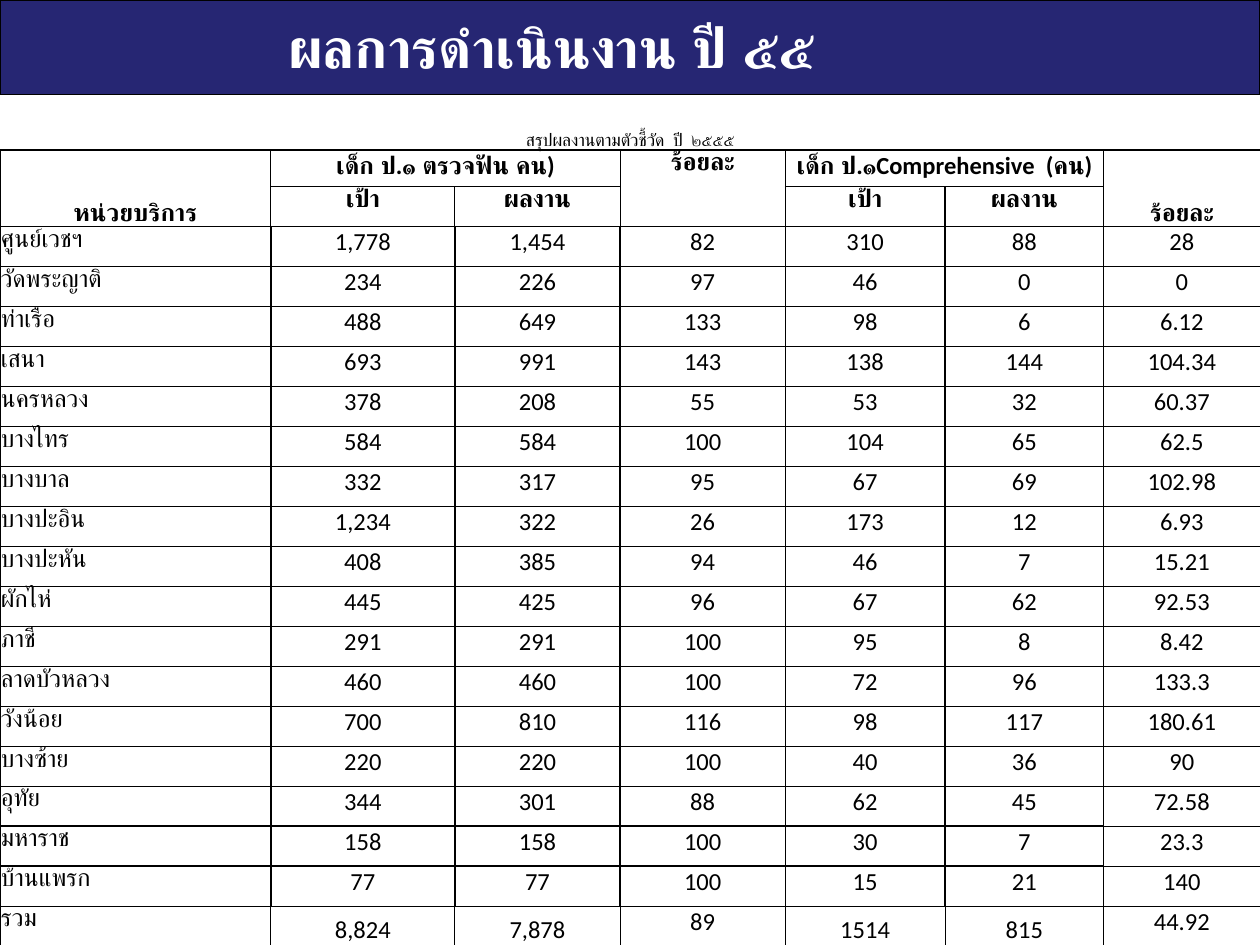
from dataclasses import dataclass

from lxml import etree
from pptx import Presentation
from pptx.dml.color import RGBColor
from pptx.enum.shapes import MSO_SHAPE
from pptx.enum.text import MSO_ANCHOR, PP_ALIGN
from pptx.oxml.ns import qn
from pptx.slide import Slide
from pptx.table import Table, _Cell
from pptx.util import Cm, Pt

RECTANGLE = MSO_SHAPE.RECTANGLE
TOP, MIDDLE, BOTTOM = MSO_ANCHOR.TOP, MSO_ANCHOR.MIDDLE, MSO_ANCHOR.BOTTOM
LEFT, CENTER = PP_ALIGN.LEFT, PP_ALIGN.CENTER
SIDES = "LRTB"


@dataclass(frozen=True)
class Theme:
    banner: RGBColor = RGBColor(0x26, 0x26, 0x73)
    ink: RGBColor = RGBColor(0, 0, 0)
    white: RGBColor = RGBColor(0xFF, 0xFF, 0xFF)
    title_font: str = "Lato"
    table_font: str = "Calibri"
    title_size: Pt = Pt(32)
    caption_size: Pt = Pt(10)
    table_size: Pt = Pt(14)
    thin: Pt = Pt(0.5)
    banner_line: Pt = Pt(0.75)
    thick: Pt = Pt(1)


@dataclass(frozen=True)
class HeaderCell:
    text: str
    row: int
    column: int
    row_span: int = 1
    column_span: int = 1
    anchor: MSO_ANCHOR = TOP


THEME = Theme()
SLIDE_WIDTH, SLIDE_HEIGHT = Cm(25.4), Cm(19.05)
TABLE_TOP = Cm(1.98)
COLUMN_WIDTHS = [Cm(width) for width in (5.46, 3.71, 3.33, 3.33, 3.22, 3.2, 3.15)]
CAPTION_HEIGHT, GROUP_HEIGHT, TOTAL_HEIGHT = Cm(1.04), Cm(0.74), Cm(0.78)
CAPTION_ROW, GROUP_ROW, SUBHEAD_ROW, FIRST_BODY_ROW = range(4)

HEADERS = [
    HeaderCell("หน่วยบริการ", GROUP_ROW, 0, row_span=2, anchor=BOTTOM),
    HeaderCell("เด็ก ป.๑ ตรวจฟัน คน)", GROUP_ROW, 1, column_span=2),
    HeaderCell("ร้อยละ", GROUP_ROW, 3, row_span=2),
    HeaderCell("เด็ก ป.๑Comprehensive  (คน)", GROUP_ROW, 4, column_span=2),
    HeaderCell("ร้อยละ", GROUP_ROW, 6, row_span=2, anchor=BOTTOM),
    *(HeaderCell(text, SUBHEAD_ROW, start + offset)
      for start in (1, 4) for offset, text in enumerate(("เป้า", "ผลงาน"))),
]

RESULTS = [
    ("ศูนย์เวชฯ", "1,778", "1,454", "82", "310", "88", "28"),
    ("วัดพระญาติ", "234", "226", "97", "46", "0", "0"),
    ("ท่าเรือ", "488", "649", "133", "98", "6", "6.12"),
    ("เสนา", "693", "991", "143", "138", "144", "104.34"),
    ("นครหลวง", "378", "208", "55", "53", "32", "60.37"),
    ("บางไทร", "584", "584", "100", "104", "65", "62.5"),
    ("บางบาล", "332", "317", "95", "67", "69", "102.98"),
    ("บางปะอิน", "1,234", "322", "26", "173", "12", "6.93"),
    ("บางปะหัน", "408", "385", "94", "46", "7", "15.21"),
    ("ผักไห่", "445", "425", "96", "67", "62", "92.53"),
    ("ภาชี", "291", "291", "100", "95", "8", "8.42"),
    ("ลาดบัวหลวง", "460", "460", "100", "72", "96", "133.3"),
    ("วังน้อย", "700", "810", "116", "98", "117", "180.61"),
    ("บางซ้าย", "220", "220", "100", "40", "36", "90"),
    ("อุทัย", "344", "301", "88", "62", "45", "72.58"),
    ("มหาราช", "158", "158", "100", "30", "7", "23.3"),
    ("บ้านแพรก", "77", "77", "100", "15", "21", "140"),
    ("รวม", "8,824", "7,878", "89", "1514", "815", "44.92"),
]
TOTAL_ROW = FIRST_BODY_ROW + len(RESULTS) - 1


def thick_sides(row: int, column: int) -> str:
    """Name the sides of a cell that carry the heavier rule."""
    if row == GROUP_ROW:
        return "B" if column == 0 else ""
    if row == SUBHEAD_ROW:
        return {4: "RB", 5: "LB"}.get(column, "B")
    if row == TOTAL_ROW or column == 6:
        return ""
    sides = "LTB" if column == 5 else SIDES
    return sides.replace("B", "") if row == TOTAL_ROW - 1 else sides


def set_borders(cell: _Cell, row: int, column: int) -> None:
    properties = cell._tc.get_or_add_tcPr()
    heavy = thick_sides(row, column)
    for side in SIDES:
        width = THEME.thick if side in heavy else THEME.thin
        line = etree.SubElement(properties, qn(f"a:ln{side}"), w=str(int(width)))
        if row == CAPTION_ROW and side != "B":
            etree.SubElement(line, qn("a:noFill"))
        else:
            fill = etree.SubElement(line, qn("a:solidFill"))
            etree.SubElement(fill, qn("a:srgbClr"), val=str(THEME.ink))


def fill_cell(table: Table, row: int, column: int, text: str, anchor: MSO_ANCHOR = TOP,
              alignment: PP_ALIGN = CENTER, size: Pt = THEME.table_size,
              bold: bool = False) -> None:
    cell = table.cell(row, column)
    set_borders(cell, row, column)
    cell.fill.background()
    cell.margin_left = cell.margin_right = cell.margin_top = Cm(0.02)
    cell.margin_bottom = 0
    cell.vertical_anchor = anchor
    cell.text = text
    paragraph = cell.text_frame.paragraphs[0]
    paragraph.alignment = alignment
    font = paragraph.font
    font.name, font.size, font.bold = THEME.table_font, size, bold
    font.color.rgb = THEME.ink


def add_banner(slide: Slide) -> None:
    banner = slide.shapes.add_shape(RECTANGLE, 0, 0, SLIDE_WIDTH, Cm(1.9))
    banner.shadow.inherit = False
    banner.fill.solid()
    banner.fill.fore_color.rgb = THEME.banner
    banner.line.color.rgb = THEME.ink
    banner.line.width = THEME.banner_line

    title = slide.shapes.add_textbox(Cm(0.43), Cm(0.08), Cm(21.39), Cm(1.7))
    frame = title.text_frame
    frame.word_wrap = True
    frame.vertical_anchor = MIDDLE
    frame.text = "ผลการดำเนินงาน ปี ๕๕"
    paragraph = frame.paragraphs[0]
    paragraph.alignment = CENTER
    font = paragraph.font
    font.name, font.size, font.bold = THEME.title_font, THEME.title_size, True
    font.color.rgb = THEME.white


def add_results_table(slide: Slide) -> None:
    height = SLIDE_HEIGHT - TABLE_TOP
    frame = slide.shapes.add_table(TOTAL_ROW + 1, len(COLUMN_WIDTHS), 0, TABLE_TOP,
                                   SLIDE_WIDTH, height)
    table = frame.table
    table.first_row = table.horz_banding = False
    for column, width in zip(table.columns, COLUMN_WIDTHS):
        column.width = width
    regular_count = TOTAL_ROW - SUBHEAD_ROW
    regular_height = (height - CAPTION_HEIGHT - GROUP_HEIGHT - TOTAL_HEIGHT) // regular_count
    heights = [CAPTION_HEIGHT, GROUP_HEIGHT, *[regular_height] * regular_count, TOTAL_HEIGHT]
    for row, row_height in zip(table.rows, heights):
        row.height = row_height

    table.cell(CAPTION_ROW, 0).merge(table.cell(CAPTION_ROW, len(COLUMN_WIDTHS) - 1))
    fill_cell(table, CAPTION_ROW, 0, "สรุปผลงานตามตัวชี้วัด  ปี  ๒๕๕๕", BOTTOM,
              size=THEME.caption_size)
    for header in HEADERS:
        if header.row_span > 1 or header.column_span > 1:
            table.cell(header.row, header.column).merge(
                table.cell(header.row + header.row_span - 1,
                           header.column + header.column_span - 1))
        fill_cell(table, header.row, header.column, header.text, header.anchor, bold=True)
    for row, values in enumerate(RESULTS, FIRST_BODY_ROW):
        for column, text in enumerate(values):
            anchor = BOTTOM if row == TOTAL_ROW and column in (1, 2, 4, 5) else TOP
            fill_cell(table, row, column, text, anchor, CENTER if column else LEFT)


def main() -> None:
    presentation = Presentation()
    presentation.slide_width, presentation.slide_height = SLIDE_WIDTH, SLIDE_HEIGHT
    slide = presentation.slides.add_slide(presentation.slide_layouts[6])
    add_banner(slide)
    add_results_table(slide)
    presentation.save("out.pptx")


if __name__ == "__main__":
    main()
